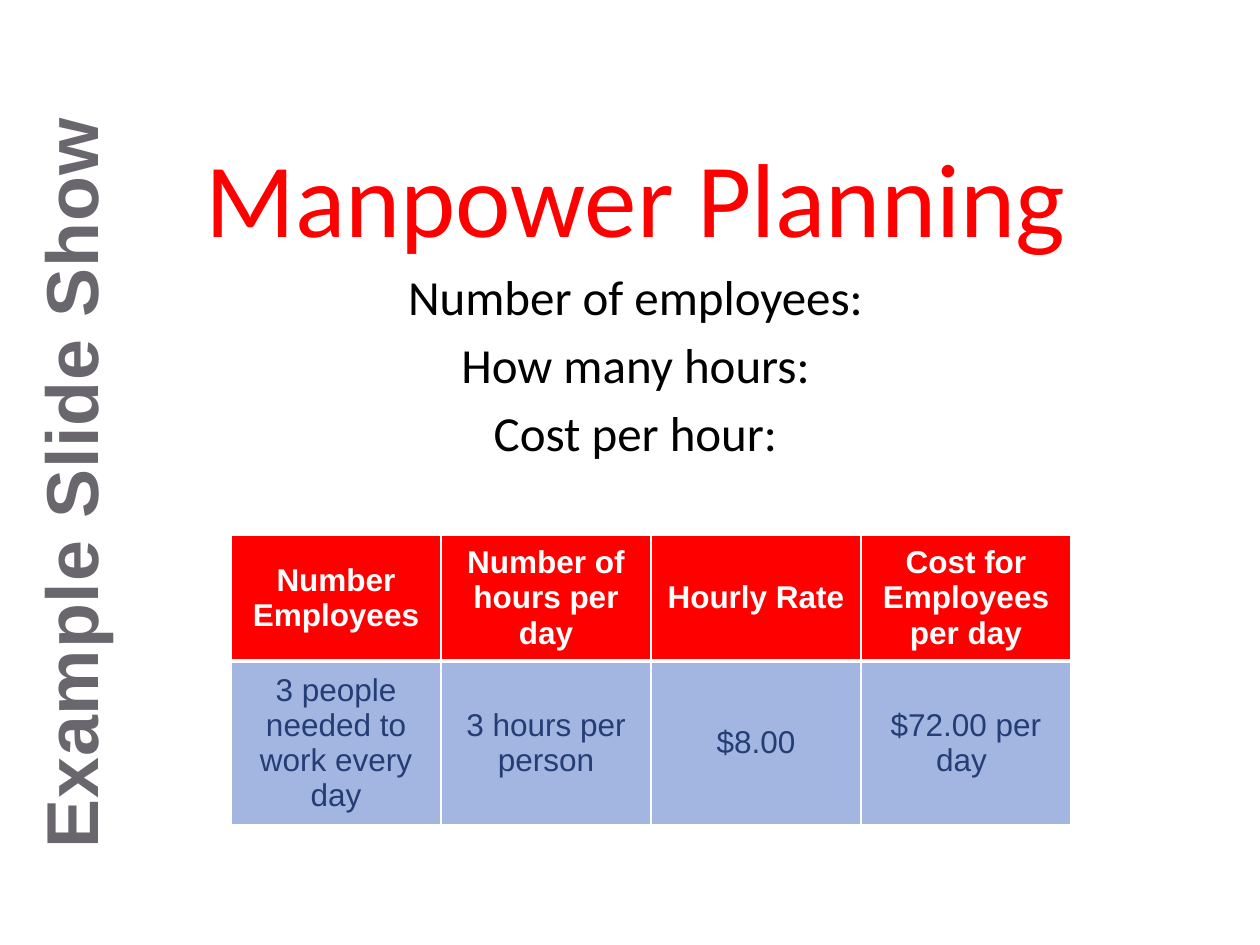
from lxml import etree
from pptx import Presentation
from pptx.dml.color import RGBColor
from pptx.enum.text import MSO_ANCHOR, PP_ALIGN
from pptx.oxml.ns import qn
from pptx.util import Pt

EMU_PER_PX = 914400 / 126
CENTER = PP_ALIGN.CENTER
MIDDLE = MSO_ANCHOR.MIDDLE

RED = RGBColor(0xFF, 0x00, 0x00)
BLACK = RGBColor(0x00, 0x00, 0x00)
WHITE = RGBColor(0xFF, 0xFF, 0xFF)
GRAY = RGBColor(0x69, 0x67, 0x6D)
NAVY = RGBColor(0x25, 0x3D, 0x75)
LIGHT_BLUE = RGBColor(0xA3, 0xB6, 0xE2)

TITLE = {"name": "Calibri", "size": Pt(60), "color": RED}
PROMPT = {"name": "Calibri", "size": Pt(28), "color": BLACK}
BANNER = {"name": "Arial", "size": Pt(42), "color": GRAY, "bold": True}
HEADER = {"name": "Arial", "size": Pt(18), "color": WHITE, "bold": True}
BODY = {"name": "Arial", "size": Pt(18), "color": NAVY, "bold": False}


def px(n):
    return round(n * EMU_PER_PX)


class SlideBuilder:
    def __init__(self, prs):
        self.slide = prs.slides.add_slide(prs.slide_layouts[6])

    def add_run(self, p, text, style):
        p.alignment = CENTER
        r = p.add_run()
        r.text = text
        for key, value in style.items():
            if key == "color":
                r.font.color.rgb = value
            else:
                setattr(r.font, key, value)

    def text(self, box, lines, wrap=True):
        """Add a text box; lines holds (text, style, points before)."""
        sp = self.slide.shapes.add_textbox(*map(px, box))
        tf = sp.text_frame
        tf.word_wrap = wrap
        for i, (text, style, before) in enumerate(lines):
            p = tf.add_paragraph() if i else tf.paragraphs[0]
            p.space_before = Pt(before)
            self.add_run(p, text, style)
        return sp

    def vertical_text(self, box, text, style, spacing):
        """Add text that reads upwards; spacing is in hundredths of a point."""
        sp = self.text(box, [(text, style, 0)], wrap=False)
        sp.rotation = 270
        r = sp.text_frame.paragraphs[0].runs[0]
        r._r.get_or_add_rPr().set("spc", str(spacing))

    def borders(self, cell, widths):
        tc_pr = cell._tc.get_or_add_tcPr()
        for i, (side, width) in enumerate(widths.items()):
            ln = etree.Element(qn(f"a:ln{side}"), w=str(Pt(width)))
            fill = etree.SubElement(ln, qn("a:solidFill"))
            etree.SubElement(fill, qn("a:srgbClr"), val=str(WHITE))
            tc_pr.insert(i, ln)

    def table(self, box, heights, rows):
        """Add a table; rows holds (texts, style, fill, top border, bottom border)."""
        shape = self.slide.shapes.add_table(len(rows), len(rows[0][0]), *map(px, box))
        table = shape.table
        for row, height in zip(table.rows, heights):
            row.height = px(height)
        for i, (texts, style, color, top, bottom) in enumerate(rows):
            for j, text in enumerate(texts):
                cell = table.cell(i, j)
                cell.vertical_anchor = MIDDLE
                cell.fill.solid()
                cell.fill.fore_color.rgb = color
                self.add_run(cell.text_frame.paragraphs[0], text, style)
                self.borders(cell, {"L": 1, "R": 1, "T": top, "B": bottom})


def main():
    prs = Presentation()
    prs.slide_width, prs.slide_height = px(1260), px(945)
    s = SlideBuilder(prs)

    prompts = ["Number of employees:", "How many hours:", "Cost per hour:"]
    s.text((105, 126, 1061, 451),
           [("Manpower Planning", TITLE, 4)] + [(t, PROMPT, 5) for t in prompts])

    s.table((231, 535, 840, 272), (119, 153), [
        (["Number Employees", "Number of hours per day", "Hourly Rate",
          "Cost for Employees per day"], HEADER, RED, 1, 3),
        (["3 people needed to work every day", "3 hours per person", "$8.00",
          "$72.00 per day "], BODY, LIGHT_BLUE, 3, 1),
    ])

    s.vertical_text((-328, 422, 796, 102), "Example Slide Show ", BANNER, 50)
    prs.save("out.pptx")


if __name__ == "__main__":
    main()
